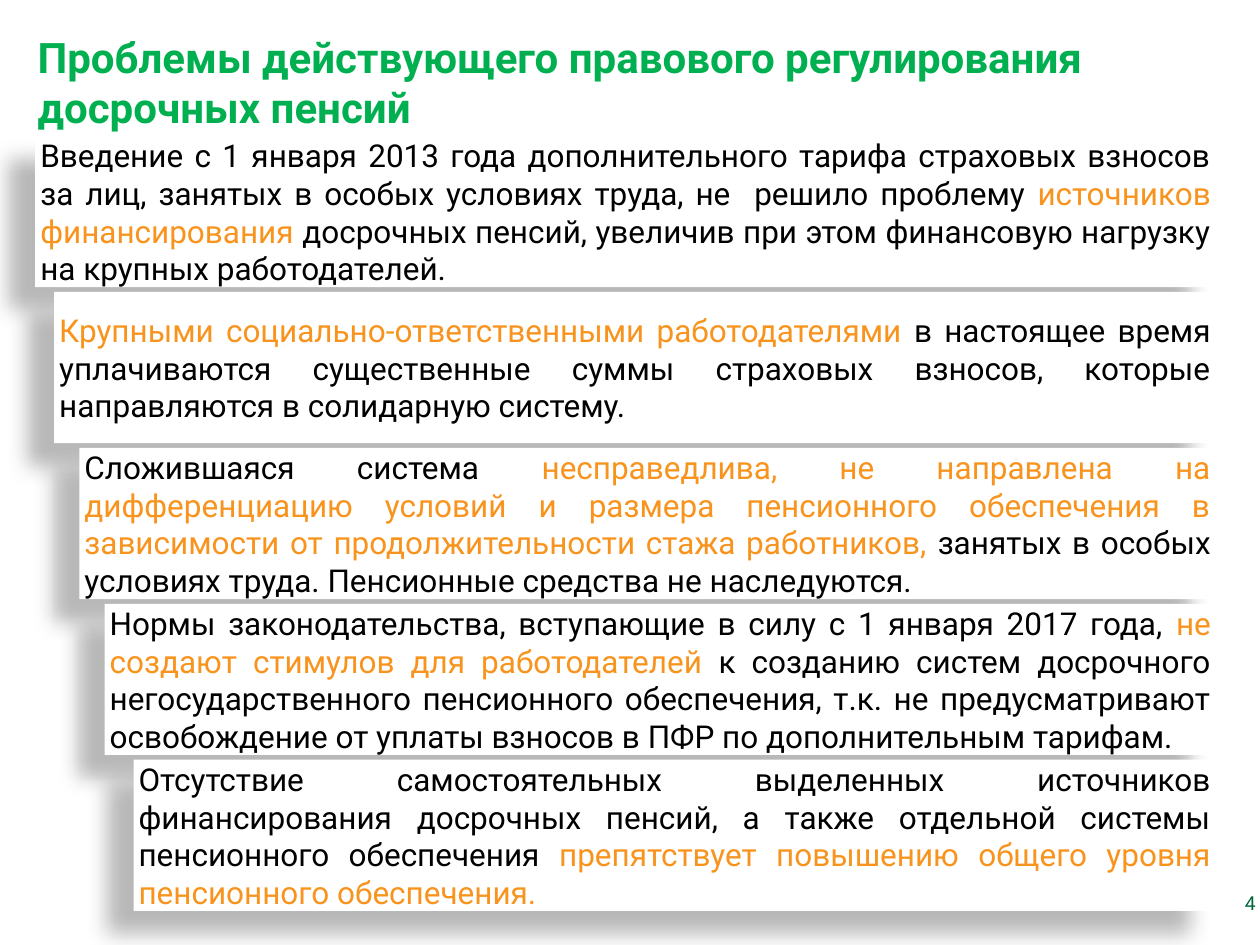
from lxml import etree
from pptx import Presentation
from pptx.dml.color import RGBColor
from pptx.enum.shapes import MSO_SHAPE
from pptx.enum.text import MSO_ANCHOR, MSO_AUTO_SIZE, PP_ALIGN
from pptx.oxml.ns import qn
from pptx.util import Inches, Pt

RECT = MSO_SHAPE.RECTANGLE
MIDDLE = MSO_ANCHOR.MIDDLE
GROW = MSO_AUTO_SIZE.SHAPE_TO_FIT_TEXT
JUSTIFY = PP_ALIGN.JUSTIFY

FONT = "Roboto"
BLACK, WHITE, ORANGE = "000000", "FFFFFF", "F8941D"
GREEN, DARK_GREEN = "00B050", "00663B"

TITLE = ["Проблемы действующего правового регулирования ", "досрочных пенсий"]

# Each problem: left edge of its card and its coloured text parts
PROBLEMS = [
    (0.28, [
        ("Введение с 1 января 2013 года дополнительного тарифа страховых взносов "
         "за лиц, занятых в особых условиях труда, не  решило проблему ", BLACK),
        ("источников финансирования ", ORANGE),
        ("досрочных пенсий, увеличив при этом финансовую нагрузку на крупных "
         "работодателей.", BLACK)]),
    (0.43, [
        ("Крупными социально-ответственными работодателями", ORANGE),
        (" в настоящее время уплачиваются существенные суммы страховых взносов, "
         "которые направляются в солидарную систему.", BLACK)]),
    (0.63, [
        ("Сложившаяся система ", BLACK),
        ("несправедлива, не направлена на дифференциацию условий и размера "
         "пенсионного обеспечения в зависимости от продолжительности стажа "
         "работников, ", ORANGE),
        ("занятых в особых условиях труда. Пенсионные средства не наследуются.",
         BLACK)]),
    (0.83, [
        ("Нормы законодательства, вступающие в силу с 1 января 2017 года, ", BLACK),
        ("не создают стимулов для работодателей ", ORANGE),
        ("к созданию систем досрочного негосударственного пенсионного "
         "обеспечения, т.к. не предусматривают освобождение от уплаты взносов в "
         "ПФР по дополнительным тарифам. ", BLACK)]),
    (1.06, [
        ("Отсутствие самостоятельных выделенных источников финансирования "
         "досрочных пенсий, а также отдельной системы пенсионного обеспечения ",
         BLACK),
        ("препятствует повышению общего уровня пенсионного обеспечения. ",
         ORANGE)]),
]


def rgb(value):
    return RGBColor.from_string(value)


def add_run(p, text, size, color, bold=False):
    r = p.add_run()
    r.text = text
    r.font.name = FONT
    r.font.size = Pt(size)
    r.font.bold = bold
    r.font.color.rgb = rgb(color)


def set_margins(tf, margin):
    tf.margin_left = tf.margin_right = Inches(margin)
    tf.margin_top = tf.margin_bottom = Inches(margin)


def add_shadow(sp):
    """Cast a soft shadow down and to the left."""
    sp.shadow.inherit = False
    effects = sp._element.spPr.find(qn("a:effectLst"))
    shadow = etree.SubElement(effects, qn("a:outerShdw"), blurRad=str(Pt(11.8)),
                              dist=str(Pt(19.7)), dir=str(141 * 60000),
                              algn="ctr", rotWithShape="0")
    color = etree.SubElement(shadow, qn("a:srgbClr"), val=BLACK)
    etree.SubElement(color, qn("a:alpha"), val="28000")


def add_title(s, left, top, width, height):
    box = s.shapes.add_textbox(Inches(left), Inches(top), Inches(width), Inches(height))
    tf = box.text_frame
    tf.word_wrap = True
    tf.auto_size = GROW
    for i, line in enumerate(TITLE):
        p = tf.add_paragraph() if i else tf.paragraphs[0]
        p.alignment = JUSTIFY
        add_run(p, line, 24, GREEN, bold=True)


def add_card(s, left, top, width, height, parts):
    sp = s.shapes.add_shape(RECT, Inches(left), Inches(top), Inches(width), Inches(height))
    sp.fill.solid()
    sp.fill.fore_color.rgb = rgb(WHITE)
    sp.line.fill.background()
    add_shadow(sp)
    tf = sp.text_frame
    tf.word_wrap = True
    tf.vertical_anchor = MIDDLE
    set_margins(tf, 0.04)
    p = tf.paragraphs[0]
    p.alignment = JUSTIFY
    for text, color in parts:
        add_run(p, text, 18, color)


def add_problems(s, top, right, bottom, card_height):
    """Stack the cards at equal steps, all ending at the same right edge."""
    step = (bottom - top - card_height) / (len(PROBLEMS) - 1)
    for i, (left, parts) in enumerate(PROBLEMS):
        add_card(s, left, top + i * step, right - left, card_height, parts)


def add_page_number(s, left, top, width, height):
    box = s.shapes.add_textbox(Inches(left), Inches(top), Inches(width), Inches(height))
    tf = box.text_frame
    tf.word_wrap = False
    tf.auto_size = GROW
    set_margins(tf, 0)
    p = tf.paragraphs[0]
    p.line_spacing = Pt(14)
    add_run(p, "4", 11, DARK_GREEN)


def main():
    prs = Presentation()
    prs.slide_width, prs.slide_height = Inches(10), Inches(7.5)
    s = prs.slides.add_slide(prs.slide_layouts[6])
    add_title(s, 0.2, 0.2, 9.45, 0.91)
    add_problems(s, top=1.08, right=9.65, bottom=7.23, card_height=1.2)
    add_page_number(s, 9.88, 7.06, 0.08, 0.39)
    prs.save("out.pptx")


if __name__ == "__main__":
    main()
